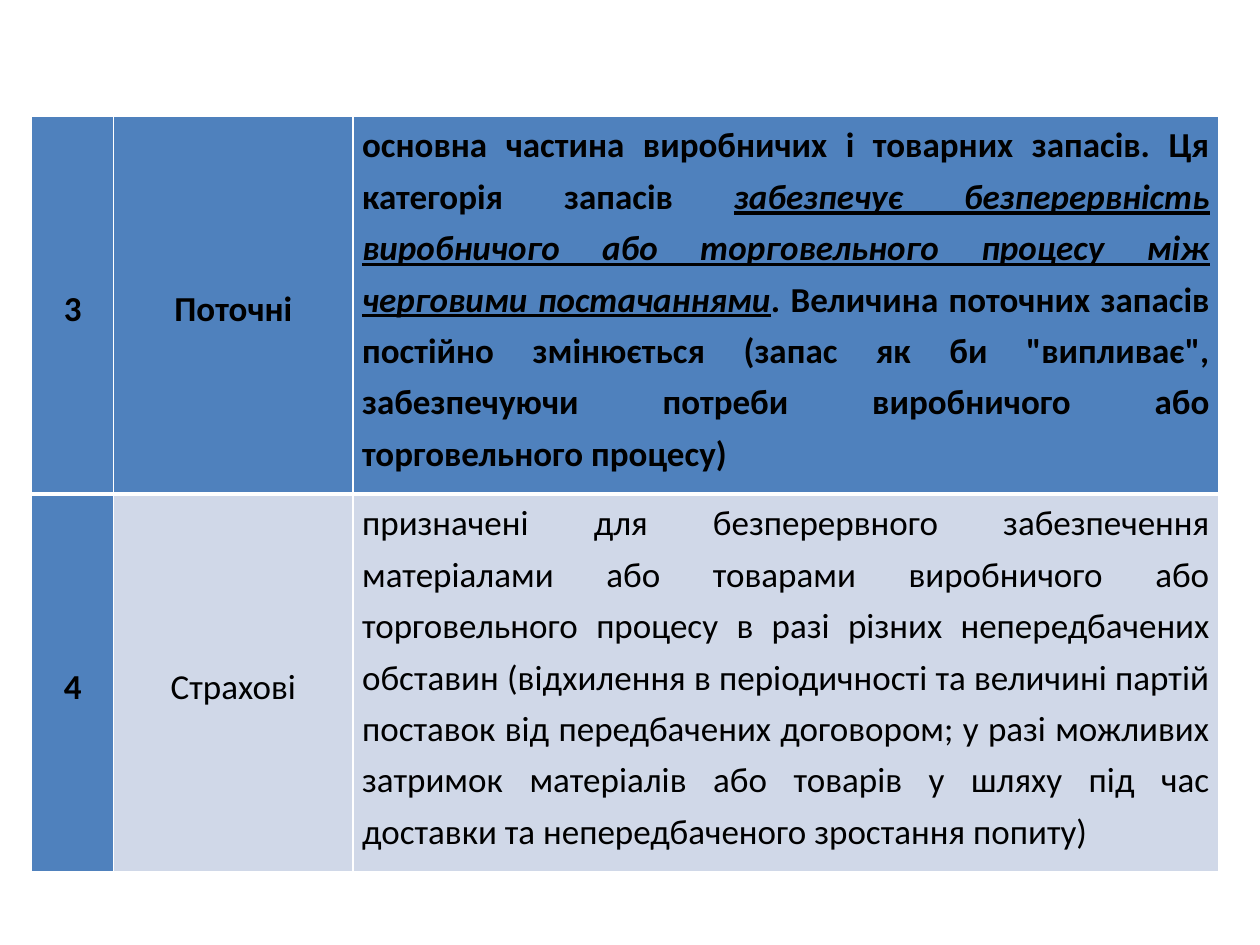
from dataclasses import dataclass

from lxml.etree import SubElement
from pptx import Presentation
from pptx.dml.color import RGBColor
from pptx.enum.text import MSO_ANCHOR as Anchor, PP_ALIGN as Align
from pptx.oxml.ns import qn
from pptx.util import Cm, Pt


@dataclass(frozen=True)
class Theme:
    font: str = "Calibri"
    size: int = 20
    text: str = "000000"
    accent: str = "4F81BD"
    band: str = "D0D8E8"
    border: str = "FFFFFF"
    thin: int = 1
    thick: int = 3


THEME = Theme()
COLUMN_WIDTHS = (1.65, 4.83, 17.45)
EMPHASIS = {"italic": True, "underline": True}

# Each stock type: number, name, description; a cell is a list of (text, format)
STOCK_TYPES = [
    (
        [("3", {})],
        [("Поточні", {})],
        [
            ("основна частина виробничих і товарних запасів. Ця категорія запасів ", {}),
            ("забезпечує безперервність виробничого або торговельного процесу "
             "між черговими постачаннями", EMPHASIS),
            (". Величина поточних запасів постійно змінюється (запас як би "
             "\"випливає\", забезпечуючи потреби виробничого або "
             "торговельного процесу)", {}),
        ],
    ),
    (
        [("4", {})],
        [("Страхові", {})],
        [
            ("призначені для безперервного забезпечення матеріалами або товарами "
             "виробничого або торговельного процесу в разі різних непередбачених "
             "обставин (відхилення в періодичності та величині партій поставок від "
             "передбачених договором; у разі можливих затримок матеріалів або "
             "товарів у шляху під час доставки та непередбаченого зростання "
             "попиту)", {}),
        ],
    ),
]


def apply(target, values):
    for name, value in values.items():
        setattr(target, name, value)


def draw_borders(cell, widths):
    properties = cell._tc.get_or_add_tcPr()
    for side, width in widths.items():
        line = SubElement(properties, qn(f"a:ln{side}"), w=str(Pt(width)))
        fill = SubElement(line, qn("a:solidFill"))
        SubElement(fill, qn("a:srgbClr"), val=THEME.border)


def fill_cell(cell, content, highlighted, bold, centred, borders):
    draw_borders(cell, borders)
    cell.fill.solid()
    cell.fill.fore_color.rgb = RGBColor.from_string(
        THEME.accent if highlighted else THEME.band)
    apply(cell, {
        "margin_left": Cm(0.18), "margin_right": Cm(0.18),
        "margin_top": 0, "margin_bottom": 0,
        "vertical_anchor": Anchor.MIDDLE if centred else Anchor.TOP,
    })
    paragraph = cell.text_frame.paragraphs[0]
    apply(paragraph, {
        "alignment": Align.CENTER if centred else Align.JUSTIFY,
        "line_spacing": 1.2,
    })
    for text, emphasis in content:
        run = paragraph.add_run()
        run.text = text
        apply(run.font, {"name": THEME.font, "size": Pt(THEME.size),
                         "bold": bold, **emphasis})
        run.font.color.rgb = RGBColor.from_string(THEME.text)


def add_stock_table(slide, left, top, width, height):
    table = slide.shapes.add_table(
        len(STOCK_TYPES), len(COLUMN_WIDTHS), left, top, width, height).table
    apply(table, {"first_row": True, "first_col": True, "horz_banding": False})
    for column, share in zip(table.columns, COLUMN_WIDTHS):
        column.width = int(width * share / sum(COLUMN_WIDTHS))

    for row, stock_type in enumerate(STOCK_TYPES):
        heading = row == 0
        # The thick rule parts the first row from the second
        borders = {"L": THEME.thin, "R": THEME.thin,
                   "T": THEME.thin if heading else THEME.thick,
                   "B": THEME.thick if heading else THEME.thin}
        for column, content in enumerate(stock_type):
            highlighted = heading or column == 0
            fill_cell(table.cell(row, column), content, highlighted,
                      bold=highlighted, centred=column < 2, borders=borders)


def main():
    presentation = Presentation()
    apply(presentation, {"slide_width": Cm(25.4), "slide_height": Cm(19.05)})
    slide = presentation.slides.add_slide(presentation.slide_layouts[6])
    add_stock_table(slide, Cm(0.64), Cm(2.34), Cm(23.93), Cm(15.24))
    presentation.save("out.pptx")


if __name__ == "__main__":
    main()
